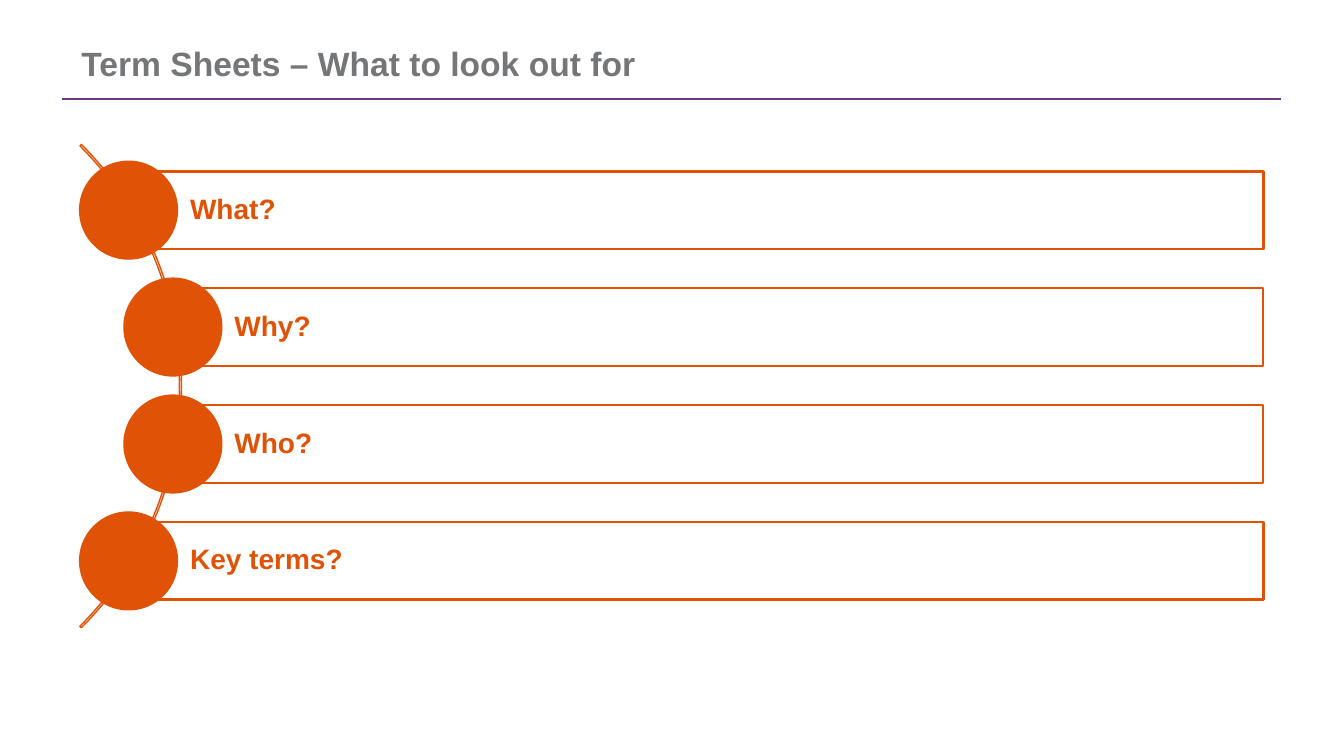
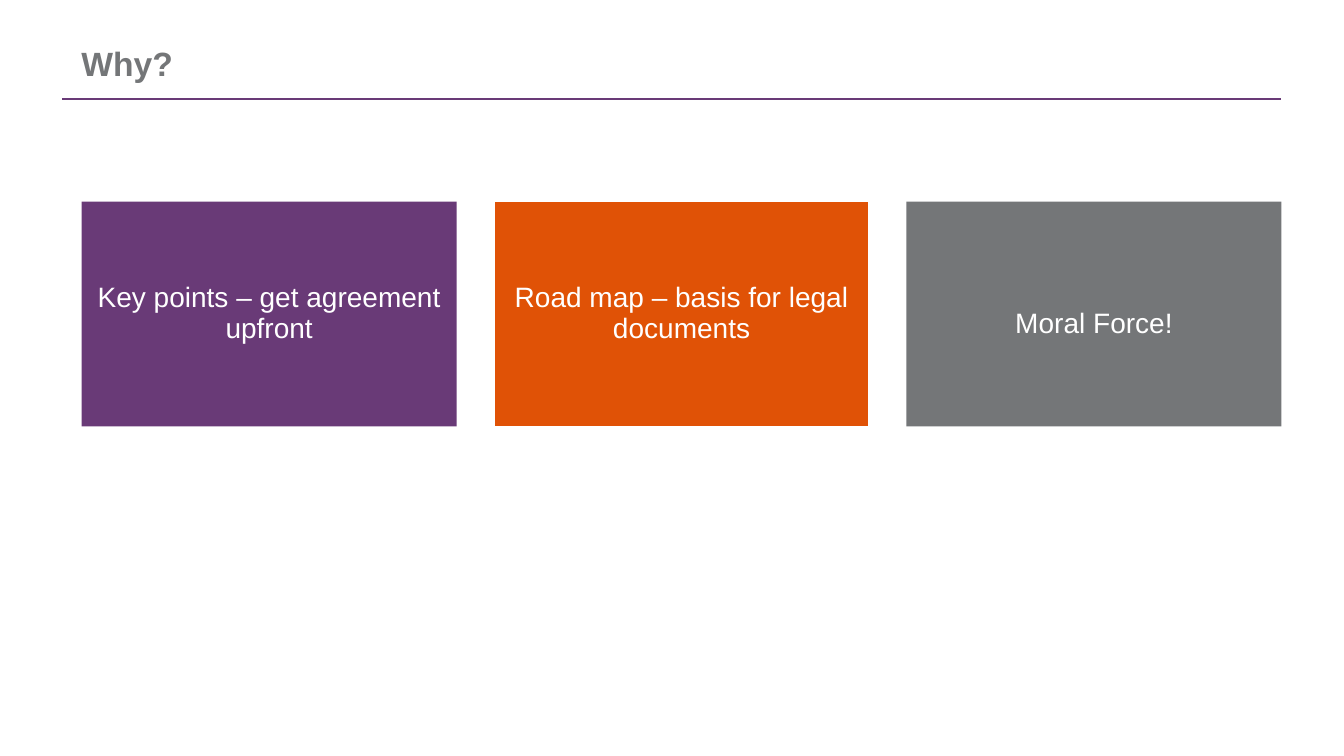
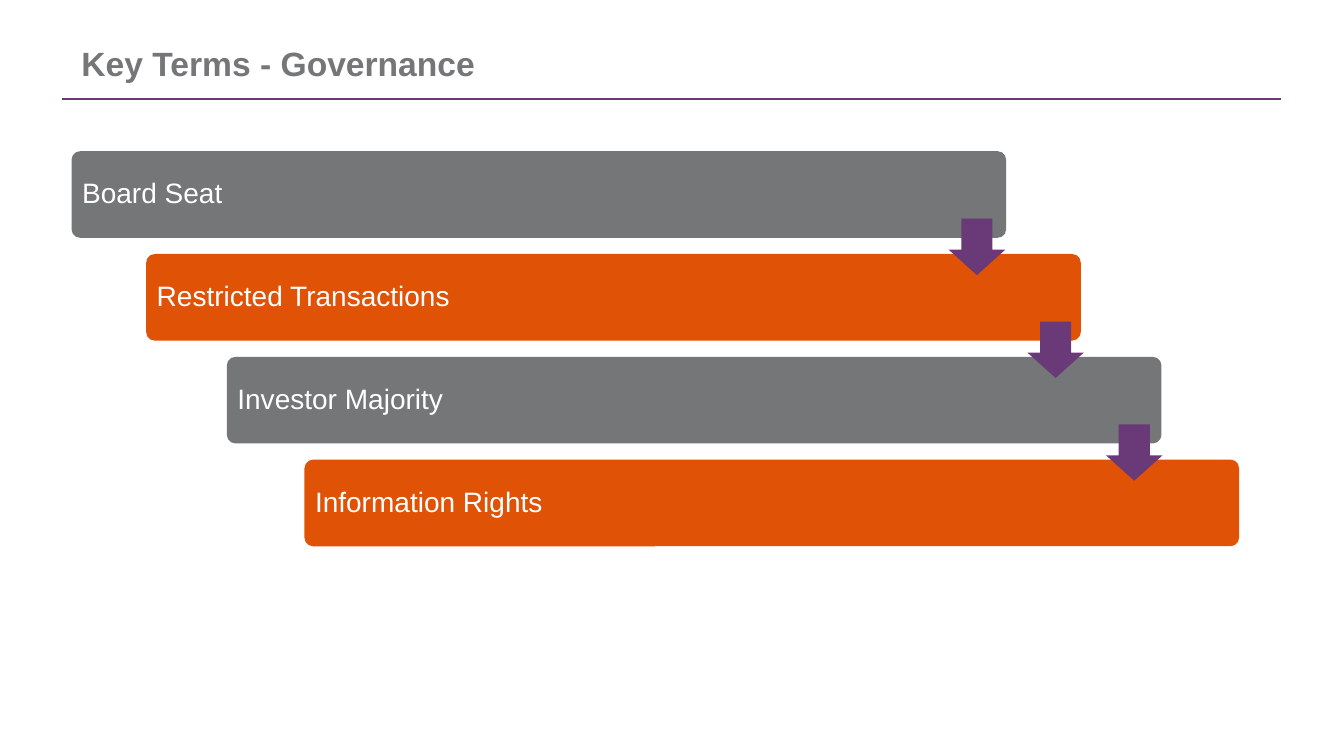
import pptx
import pptx.dml.color
import pptx.enum.shapes
import pptx.enum.text
import pptx.oxml.ns
import pptx.util
from lxml import etree

Inches = pptx.util.Inches
Pt = pptx.util.Pt
KIND = pptx.enum.shapes.MSO_SHAPE
ALIGN = pptx.enum.text.PP_ALIGN
tint = pptx.dml.color.RGBColor.from_string

PURPLE, ORANGE, GREY, WHITE = "693A77", "E05206", "747678", "FFFFFF"


def write(frame, text, color, size=20, bold=False, align=ALIGN.LEFT, space=0.9):
    frame.word_wrap = True
    frame.vertical_anchor = pptx.enum.text.MSO_ANCHOR.MIDDLE
    frame.text = text
    para = frame.paragraphs[0]
    para.alignment = align
    para.line_spacing = space
    font = para.runs[0].font
    font.name = "Arial"
    font.size = Pt(size)
    font.bold = bold
    font.color.rgb = tint(color)


def block(slide, kind, left, top, width, height, fill=None, line=None, weight=1):
    shape = slide.shapes.add_shape(
        kind, Inches(left), Inches(top), Inches(width), Inches(height))
    shape.shadow.inherit = False
    if fill:
        shape.fill.solid()
        shape.fill.fore_color.rgb = tint(fill)
    else:
        shape.fill.background()
    if line:
        shape.line.color.rgb = tint(line)
        shape.line.width = Pt(weight)
    else:
        shape.line.fill.background()
    return shape


deck = pptx.Presentation()
deck.slide_width = Inches(13.33)
deck.slide_height = Inches(7.5)

# Shared title and rule
slides = []
for title in ("Term Sheets – What to look out for", "Why?", "Key Terms - Governance"):
    slide = deck.slides.add_slide(deck.slide_layouts[6])
    rule = slide.shapes.add_connector(
        pptx.enum.shapes.MSO_CONNECTOR.STRAIGHT,
        Inches(0.62), Inches(0.98), Inches(12.71), Inches(0.98))
    rule.line.color.rgb = tint(PURPLE)
    rule.line.width = Pt(1.75)
    etree.SubElement(rule._element.spPr, pptx.oxml.ns.qn("a:effectLst"))
    head = slide.shapes.add_textbox(Inches(0.71), Inches(0.42), Inches(11.9), Inches(0.46))
    write(head.text_frame, title, GREY, 24, True)
    slides.append(slide)
topics, reasons, terms = slides

# Topics along an arc
arc = block(topics, KIND.BLOCK_ARC, -4.98, 0.44, 6.78, 6.78, line=ORANGE)
for i, value in enumerate((189, 27, 0.003)):
    arc.adjustments[i] = value

size = 0.97
items = (("What?", 0.79), ("Why?", 1.23), ("Who?", 1.23), ("Key terms?", 0.79))
for i, (text, left) in enumerate(items):
    top = 1.6 + 1.16 * i
    mid = left + size / 2
    bar = block(topics, KIND.RECTANGLE, mid, top + 0.1, 12.53 - mid, 0.77,
                line=ORANGE, weight=1.75)
    bar.text_frame.margin_left = Inches(0.61)
    write(bar.text_frame, text, ORANGE, bold=True)
    block(topics, KIND.OVAL, left, top, size, size, ORANGE, ORANGE)

# Three reasons
cards = (
    ("Key points – get agreement upfront", PURPLE, None, 0.9),
    ("Road map – basis for legal documents", ORANGE, WHITE, 0.9),
    ("Moral Force!", GREY, None, 1.5),
)
for i, (text, fill, line, space) in enumerate(cards):
    card = block(reasons, KIND.RECTANGLE, 0.81 + 4.09 * i, 2, 3.72, 2.23, fill, line)
    card.text_frame.margin_left = card.text_frame.margin_right = Inches(0.08)
    write(card.text_frame, text, WHITE, align=ALIGN.CENTER, space=space)

# Staircase of terms
step = 1.02
stairs = (
    ("Board Seat", 0.71, GREY),
    ("Restricted Transactions", 1.45, ORANGE),
    ("Investor Majority", 2.25, GREY),
    ("Information Rights", 3.02, ORANGE),
)
for i, (text, left, fill) in enumerate(stairs):
    stair = block(terms, KIND.ROUNDED_RECTANGLE, left, 1.5 + step * i, 9.27, 0.86, fill)
    stair.adjustments[0] = 0.1
    stair.text_frame.margin_left = Inches(0.08)
    write(stair.text_frame, text, WHITE)

# Arrows between the stairs
for i in range(len(stairs) - 1):
    arrow = block(terms, KIND.DOWN_ARROW, 9.41 + 0.78 * i, 2.17 + step * i,
                  0.56, 0.56, PURPLE)
    arrow.adjustments[0] = 0.55
    arrow.adjustments[1] = 0.45

deck.save("out.pptx")
